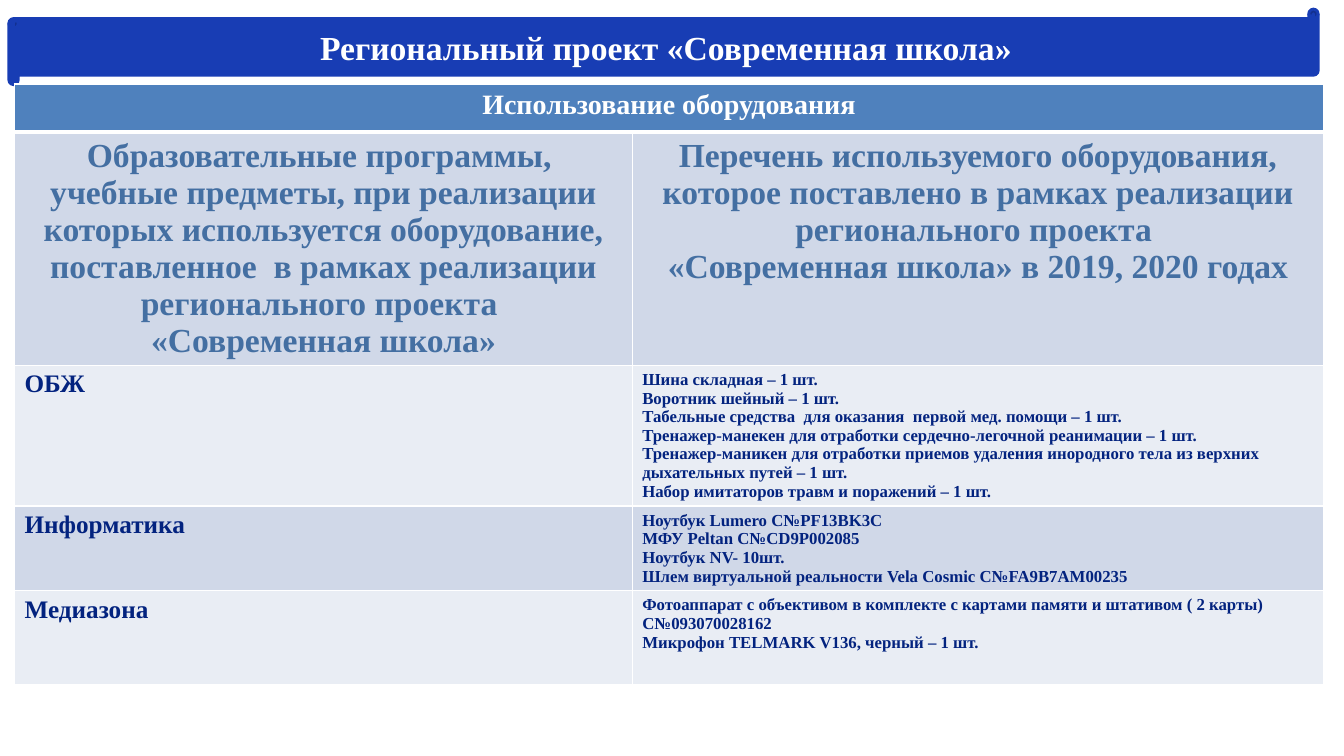
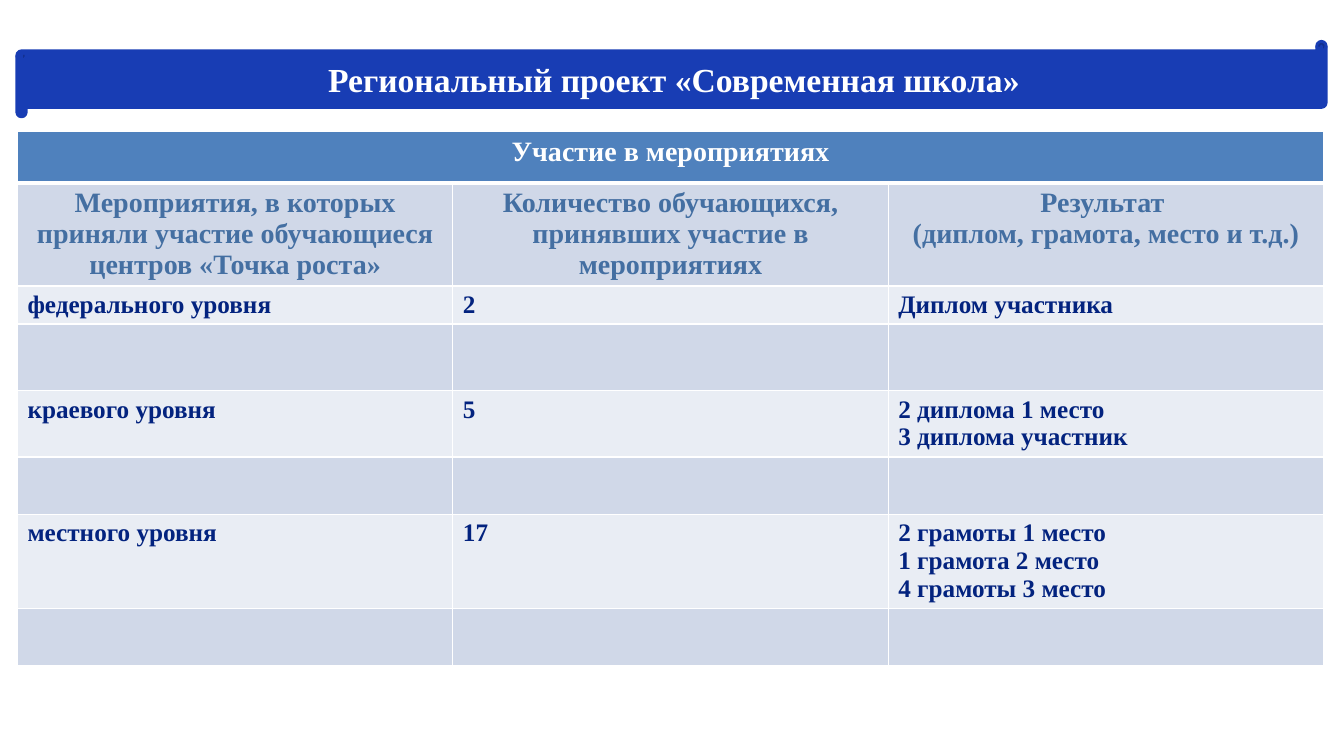
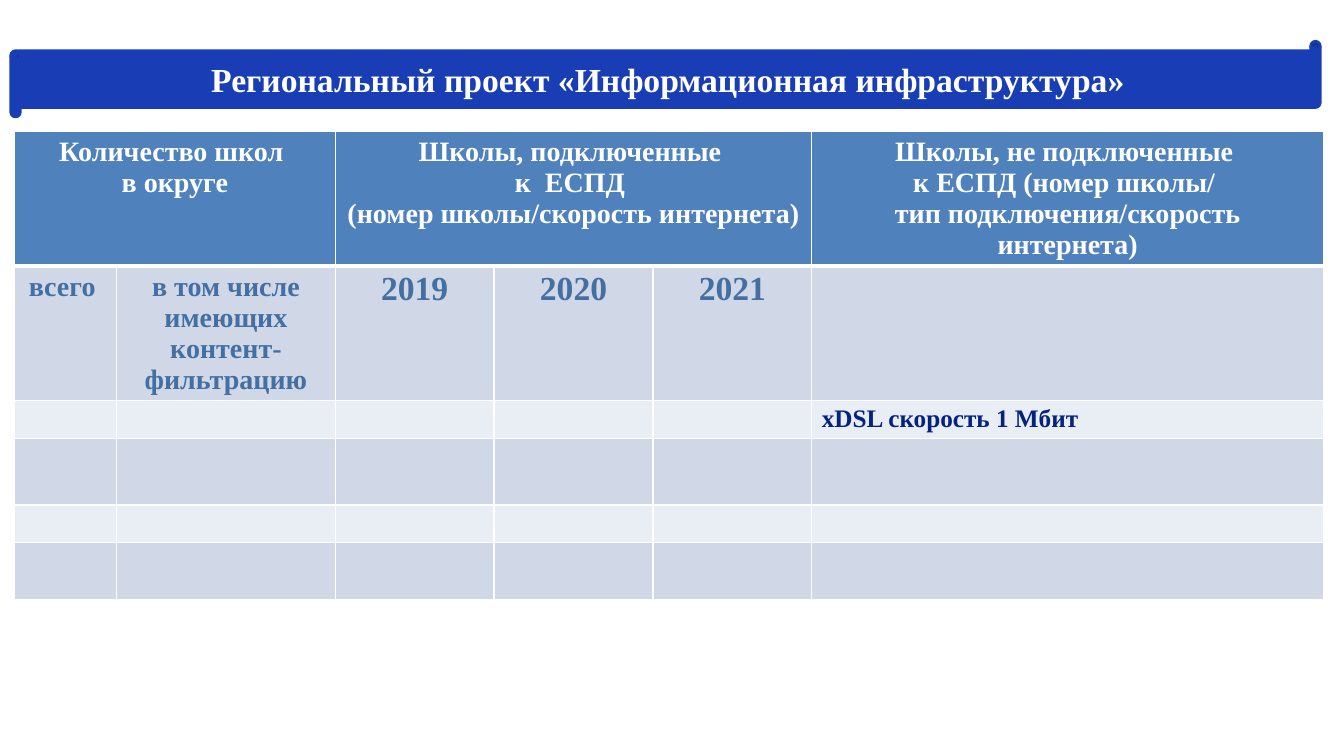
from itertools import zip_longest

from lxml.etree import SubElement
from pptx import Presentation
from pptx.dml.color import RGBColor
from pptx.enum.shapes import MSO_SHAPE
from pptx.enum.text import MSO_ANCHOR, PP_ALIGN
from pptx.oxml.ns import qn
from pptx.util import Pt

FONT = "Times New Roman"
WHITE = RGBColor(0xFF, 0xFF, 0xFF)
BANNER_BLUE = RGBColor(0x18, 0x3D, 0xB4)
HEADER_BLUE = RGBColor(0x4F, 0x81, 0xBD)
HEADING_BLUE = RGBColor(0x44, 0x6F, 0xA2)
BODY_BLUE = RGBColor(0x03, 0x23, 0x7F)
BAND_DARK = RGBColor(0xD0, 0xD8, 0xE8)
BAND_LIGHT = RGBColor(0xE9, 0xED, 0xF4)

BANNER_WIDTH, BANNER_HEIGHT = 935.3, 54
BLANK_LAYOUT = 6
EMPTY_SIZE = 12


def write(frame, text, size, color, align):
    """Write text: a newline starts a paragraph, a vertical tab a line."""
    for number, content in enumerate(text.split("\n")):
        para = frame.add_paragraph() if number else frame.paragraphs[0]
        para.alignment = align
        for part, line in enumerate(content.split("\v")):
            if part:
                para.add_line_break()
            span = para.add_run()
            span.text = line
            font = span.font
            font.name, font.size, font.bold = FONT, Pt(size), True
            font.color.rgb = color


def add_banner(page, left, top, title):
    box = page.shapes.add_shape(MSO_SHAPE.HORIZONTAL_SCROLL, Pt(left), Pt(top),
                                Pt(BANNER_WIDTH), Pt(BANNER_HEIGHT))
    box.shadow.inherit = False
    box.fill.solid()
    box.fill.fore_color.rgb = BANNER_BLUE
    box.line.color.rgb = BANNER_BLUE
    box.line.width = Pt(2)
    box.text_frame.word_wrap = True
    box.text_frame.vertical_anchor = MSO_ANCHOR.MIDDLE
    write(box.text_frame, title, 24, WHITE, PP_ALIGN.CENTER)


def set_borders(cell, top, bottom):
    properties = cell._tc.get_or_add_tcPr()
    widths = {"a:lnL": 1, "a:lnR": 1, "a:lnT": top, "a:lnB": bottom}
    for tag, width in widths.items():
        line = SubElement(properties, qn(tag), w=str(Pt(width)))
        fill = SubElement(line, qn("a:solidFill"))
        SubElement(fill, qn("a:srgbClr"), val=str(WHITE))


def style_cell(cell, row, text, size):
    """Row 0 is the header, row 1 the column headings, the rest is body."""
    set_borders(cell, top=3 if row == 1 else 1, bottom=1 if row else 3)
    cell.fill.solid()
    bands = BAND_DARK if row % 2 else BAND_LIGHT
    cell.fill.fore_color.rgb = bands if row else HEADER_BLUE
    if text:
        color = (WHITE, HEADING_BLUE, BODY_BLUE)[min(row, 2)]
        align = PP_ALIGN.CENTER if row < 2 else PP_ALIGN.LEFT
        write(cell.text_frame, text, size, color, align)
    else:
        ending = cell.text_frame.paragraphs[0]._p.get_or_add_endParaRPr()
        ending.set("sz", str(EMPTY_SIZE * 100))


def add_grid(page, left, top, widths, heights, rows, merges, sizes):
    """merges: (first, last) header columns; sizes: exceptions by (row, column)."""
    frame = page.shapes.add_table(len(heights), len(widths), Pt(left), Pt(top),
                                  Pt(sum(widths)), Pt(sum(heights)))
    table = frame.table
    for column, width in zip(table.columns, widths):
        column.width = Pt(width)
    for line, height in zip(table.rows, heights):
        line.height = Pt(height)
    for first, last in merges:
        table.cell(0, first).merge(table.cell(0, last))
    for row, texts in enumerate(rows):
        for column, (_, text) in enumerate(zip_longest(widths, texts, fillvalue="")):
            size = sizes.get((row, column), 20 if row < 2 else 18)
            style_cell(table.cell(row, column), row, text, size)


def add_page(deck):
    return deck.slides.add_slide(deck.slide_layouts[BLANK_LAYOUT])


def add_equipment_page(deck):
    page = add_page(deck)
    add_banner(page, 6.3, 6.5, "Региональный проект «Современная школа»")
    rows = [
        ["Использование оборудования"],
        ["Образовательные программы, \n"
         "учебные предметы, при реализации которых используется оборудование, "
         "поставленное  в рамках реализации регионального проекта \n"
         "«Современная школа»",
         "Перечень используемого оборудования, которое поставлено в рамках "
         "реализации регионального проекта \n"
         "«Современная школа» в 2019, 2020 годах"],
        ["ОБЖ",
         "Шина складная – 1 шт.\n"
         "Воротник шейный – 1 шт.\n"
         "Табельные средства  для оказания  первой мед. помощи – 1 шт.\n"
         "Тренажер-манекен для отработки сердечно-легочной реанимации – 1 шт.\n"
         "Тренажер-маникен для отработки приемов удаления инородного тела "
         "из верхних дыхательных путей – 1 шт.\n"
         "Набор имитаторов травм и поражений – 1 шт."],
        ["Информатика",
         "Ноутбук Lumero C№PF13BK3C\n"
         "МФУ Peltan С№CD9P002085\n"
         "Ноутбук NV- 10шт.\n"
         "Шлем виртуальной реальности Vela Cosmic C№FA9B7AM00235"],
        ["Медиазона",
         "Фотоаппарат с объективом в комплекте с картами памяти и штативом "
         "( 2 карты)\n"
         "С№093070028162\n"
         "Микрофон TELMARK V136, черный – 1 шт."],
    ]
    sizes = {(1, 0): 24, (1, 1): 24, (2, 1): 12, (3, 1): 12, (4, 1): 12}
    add_grid(page, 10.4, 60, [441.2, 493.8], [34.5, 166.5, 100.5, 60, 67],
             rows, [(0, 1)], sizes)


def add_events_page(deck):
    page = add_page(deck)
    add_banner(page, 12, 29.5, "Региональный проект «Современная школа»")
    rows = [
        ["Участие в мероприятиях"],
        ["Мероприятия, в которых приняли участие обучающиеся центров «Точка роста»",
         "Количество обучающихся, принявших участие в мероприятиях",
         "Результат \n(диплом, грамота, место и т.д.)"],
        ["федерального уровня", "2", "Диплом участника"],
        [],
        ["краевого уровня", "5", "2 диплома 1 место\n3 диплома участник"],
        [],
        ["местного уровня", "17",
         "2 грамоты 1 место\n1 грамота 2 место\n4 грамоты 3 место"],
        [],
    ]
    add_grid(page, 12.5, 94, [311] * 3, [36.5, 73.5, 27, 47.5, 47.5, 41, 67, 41],
             rows, [(0, 2)], {})


def add_network_page(deck):
    page = add_page(deck)
    add_banner(page, 7.7, 29.5, "Региональный проект «Информационная инфраструктура»")
    rows = [
        ["Количество школ \vв округе", "",
         "Школы, подключенные \nк  ЕСПД \n(номер школы/скорость интернета)", "", "",
         "Школы, не подключенные \vк ЕСПД (номер школы/ \n"
         "тип подключения/скорость интернета)"],
        ["всего ", "в том числе имеющих контент-фильтрацию", "2019", "2020", "2021"],
        ["", "", "", "", "", "xDSL скорость 1 Мбит"],
        [],
        [],
        [],
    ]
    sizes = {(1, column): 24 for column in (2, 3, 4)}
    add_grid(page, 10.4, 94, [73, 156, 113.5, 113.5, 113.5, 365.5],
             [95.5, 95.5, 27, 47.5, 27, 41], rows, [(0, 1), (2, 4)], sizes)


def main():
    deck = Presentation()
    deck.slide_width, deck.slide_height = Pt(960), Pt(540)
    add_equipment_page(deck)
    add_events_page(deck)
    add_network_page(deck)
    deck.save("out.pptx")


if __name__ == "__main__":
    main()
